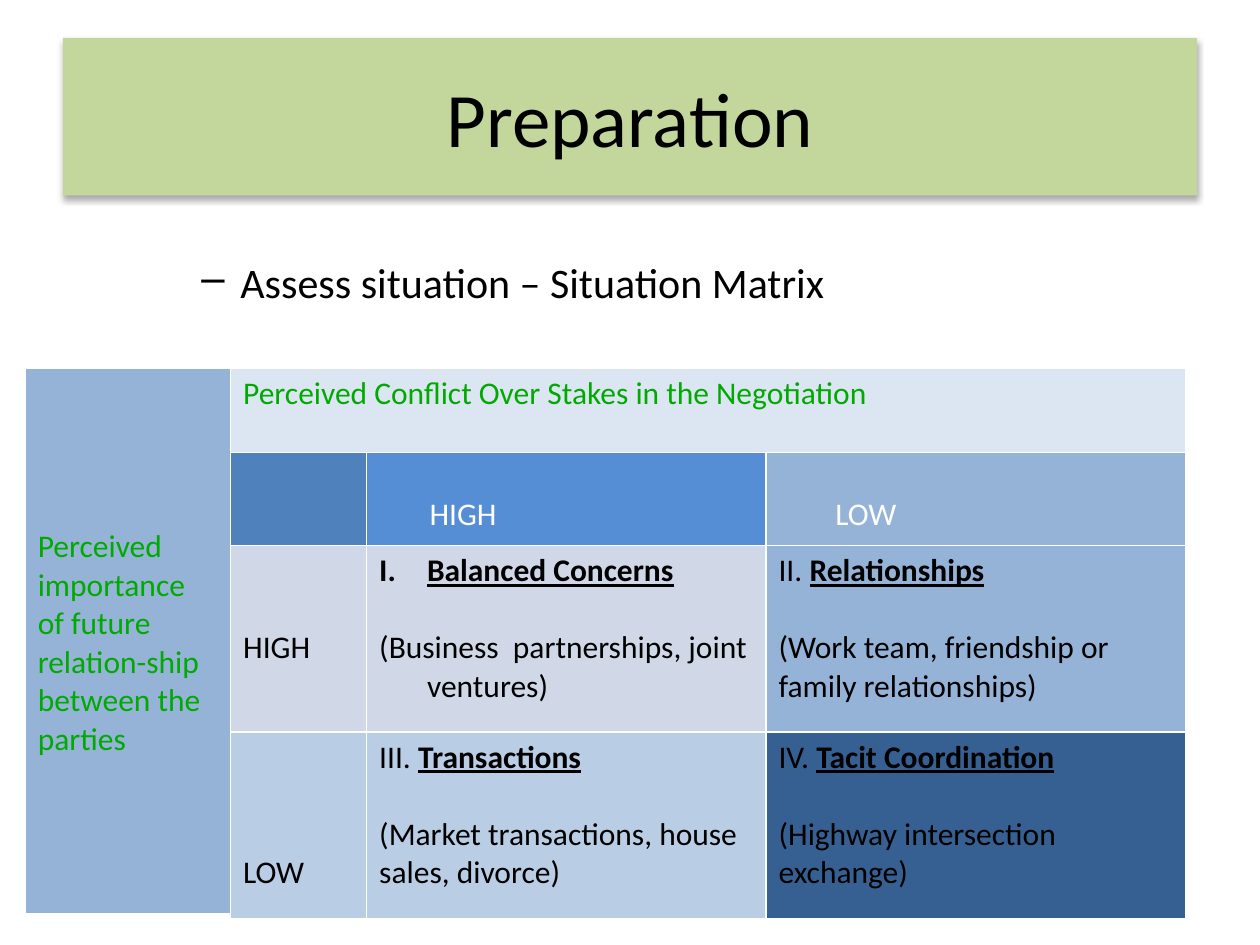
import pptx
import pptx.dml.color
import pptx.enum.shapes
import pptx.enum.text
import pptx.oxml
import pptx.oxml.ns
import pptx.util
from pptx.util import Inches

LINE = 0.305  # height of one 18 pt line in inches
GREEN, BLACK, WHITE = "00AA00", "000000", "FFFFFF"
NS = pptx.oxml.ns.nsdecls("a")


def ink(runs, hue, size):
    for run in runs:
        run.font.name = "Calibri"
        run.font.size = pptx.util.Pt(size)
        run.font.color.rgb = pptx.dml.color.RGBColor.from_string(hue)


def dress(cell, fill, hue, skip=0):
    """Style a cell whose text starts `skip` lines below its top."""
    props = cell._tc.get_or_add_tcPr()
    for side in "LRTB":
        props.append(pptx.oxml.parse_xml(
            f'<a:ln{side} {NS} w="12700"><a:solidFill><a:srgbClr val="{WHITE}"/>'
            f'</a:solidFill></a:ln{side}>'))
    cell.fill.solid()
    cell.fill.fore_color.rgb = pptx.dml.color.RGBColor.from_string(fill)
    cell.margin_top = Inches(0.05 + skip * LINE)
    for para in cell.text_frame.paragraphs:
        ink(para.runs, hue, 18)


deck = pptx.Presentation()
deck.slide_width, deck.slide_height = Inches(10), Inches(7.5)
slide = deck.slides.add_slide(deck.slide_layouts[6])
shapes = slide.shapes

# Title band
band = shapes.add_shape(pptx.enum.shapes.MSO_SHAPE.RECTANGLE,
                        Inches(0.5), Inches(0.3), Inches(9), Inches(1.25))
band.fill.solid()
band.fill.fore_color.rgb = pptx.dml.color.RGBColor.from_string("C3D69B")
band.line.fill.background()
band.shadow.inherit = False
glow = band._element.spPr.find(pptx.oxml.ns.qn("a:effectLst"))
glow.append(pptx.oxml.parse_xml(
    f'<a:outerShdw {NS} blurRad="44450" dist="27940" dir="5400000" rotWithShape="0">'
    '<a:srgbClr val="000000"><a:alpha val="32000"/></a:srgbClr></a:outerShdw>'))
frame = band.text_frame
frame.text = "Preparation"
frame.vertical_anchor = pptx.enum.text.MSO_ANCHOR.MIDDLE
para = frame.paragraphs[0]
para.alignment = pptx.enum.text.PP_ALIGN.CENTER
ink(para.runs, BLACK, 44)

# Dash point
frame = shapes.add_textbox(Inches(1), Inches(1.99), Inches(8.5), Inches(0.5)).text_frame
frame.word_wrap = True
frame.text = "Assess situation – Situation Matrix"
para = frame.paragraphs[0]
ink(para.runs, BLACK, 24)
props = para._p.get_or_add_pPr()
props.set("marL", str(Inches(0.81)))
props.set("indent", str(Inches(-0.31)))
props.append(pptx.oxml.parse_xml(f'<a:buChar {NS} char="–"/>'))

# Tables: the matrix and its two axis labels
tables = []
for left, top, cols, rows in [
    (1.83, 3.58, [1.08, 3.17, 3.33], [0.75, 1.48, 1.48]),
    (1.83, 2.92, [7.58], [0.67]),
    (0.2, 2.92, [1.63], [4.33]),
]:
    table = shapes.add_table(len(rows), len(cols), Inches(left), Inches(top),
                             Inches(sum(cols)), Inches(sum(rows))).table
    table.first_row = table.horz_banding = False
    for col, width in zip(table.columns, cols):
        col.width = Inches(width)
    for row, height in zip(table.rows, rows):
        row.height = Inches(height)
    tables.append(table)
matrix, across, down = tables

for table, text, fill, skip in [
    (across, "Perceived Conflict Over Stakes in the Negotiation", "DCE6F2", 0),
    (down, "Perceived importance of future relation-ship between the parties", "95B3D7", 4),
]:
    cell = table.cell(0, 0)
    cell.text_frame.text = text
    dress(cell, fill, GREEN, skip)

# Row and column heads
for row, col, text, fill, hue, skip, inset in [
    (0, 0, "", "4F81BD", WHITE, 0, 0.1),
    (0, 1, "HIGH", "558ED5", WHITE, 1, 0.5),
    (0, 2, "LOW", "95B3D7", WHITE, 1, 0.55),
    (1, 0, "HIGH", "D0D8E8", BLACK, 2, 0.1),
    (2, 0, "LOW", "B9CDE5", BLACK, 3, 0.1),
]:
    cell = matrix.cell(row, col)
    cell.text_frame.text = text
    cell.margin_left = Inches(inset)
    dress(cell, fill, hue, skip)

# Four situations
for row, col, mark, name, note, fill in [
    (1, 1, "", "Balanced Concerns", "(Business  partnerships, joint ventures)", "D0D8E8"),
    (1, 2, "II. ", "Relationships", "(Work team, friendship or family relationships)", "95B3D7"),
    (2, 1, "III. ", "Transactions", "(Market transactions, house sales, divorce)", "B9CDE5"),
    (2, 2, "IV. ", "Tacit Coordination", "(Highway intersection exchange)", "376092"),
]:
    cell = matrix.cell(row, col)
    head = cell.text_frame.paragraphs[0]
    if mark:
        head.text = mark
    run = head.add_run()
    run.text = name
    run.font.bold = run.font.underline = True
    body = cell.text_frame.add_paragraph()
    body.text = note
    body.space_before = pptx.util.Pt(22)
    dress(cell, fill, BLACK)

# The first situation is a numbered item with a hanging indent
for para in matrix.cell(1, 1).text_frame.paragraphs:
    props = para._p.get_or_add_pPr()
    props.set("marL", str(Inches(0.38)))
    props.set("indent", str(Inches(-0.38)))
first = matrix.cell(1, 1).text_frame.paragraphs[0]
first._p.get_or_add_pPr().append(
    pptx.oxml.parse_xml(f'<a:buAutoNum {NS} type="romanUcPeriod"/>'))

deck.save("out.pptx")
